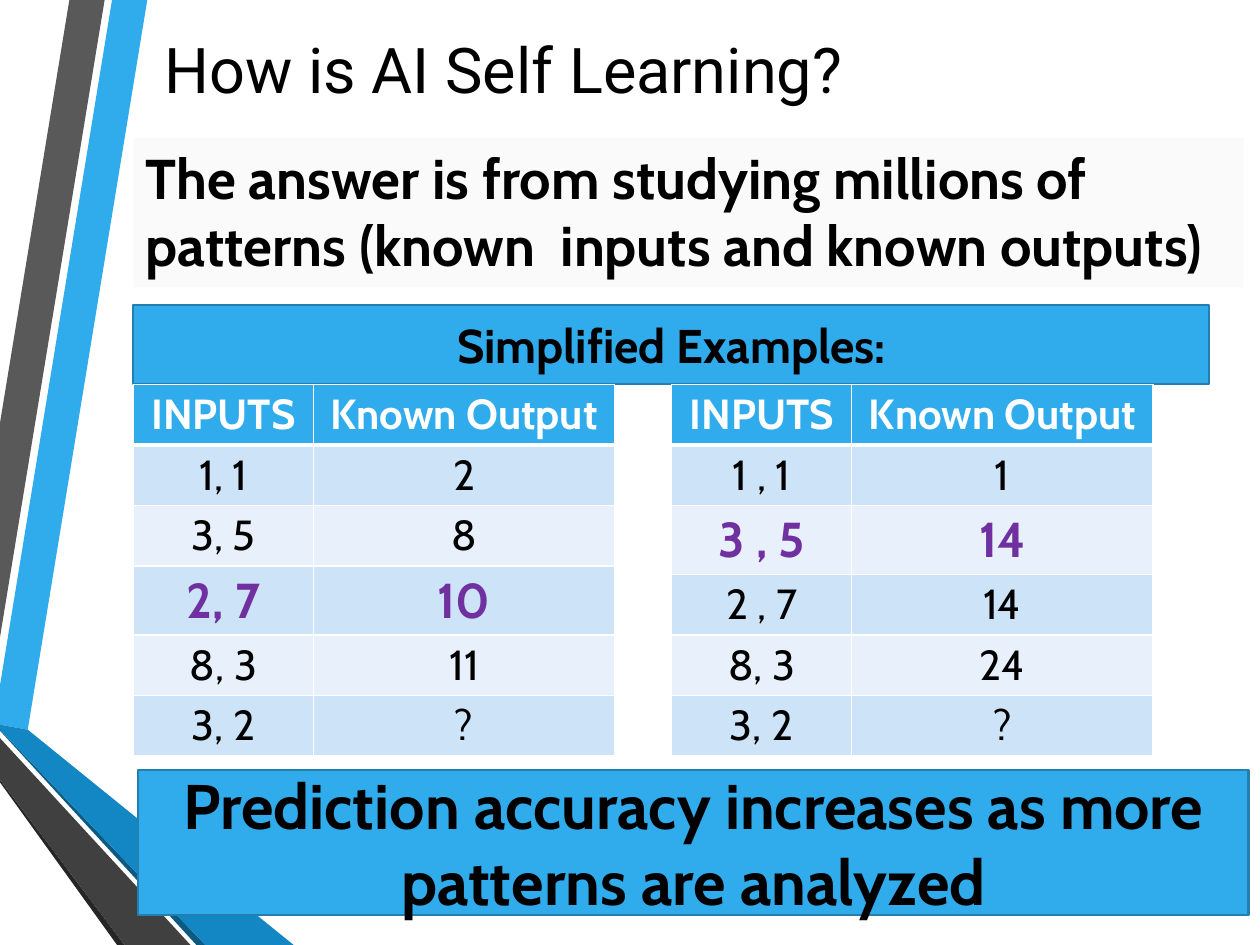
"""Build the slide on how AI learns from known inputs and outputs."""
import lxml.etree
import pptx
import pptx.dml.color
import pptx.enum.shapes
import pptx.enum.text
import pptx.oxml.ns
import pptx.util

Cm = pptx.util.Cm
Pt = pptx.util.Pt
qn = pptx.oxml.ns.qn
ALIGN = pptx.enum.text.PP_ALIGN
ANCHOR = pptx.enum.text.MSO_ANCHOR

BLUE, EDGE_BLUE, PURPLE = "30ACEC", "247FAF", "7030A0"
BLACK, WHITE, GREY = "000000", "FFFFFF", "A6A6A6"
BANDS = ("CDE3F8", "E8F1FB")

RIBBONS = [
    (BLUE, [(0, 13.82), (0, 14.61), (0.56, 14.71), (2.97, 0), (2.26, 0)]),
    ("595959", [(2.11, 0), (1.4, 0), (0, 8.53), (0, 12.85)]),
    ("262626", [(0, 15.72), (0, 15.77), (2.36, 19.05), (2.51, 19.05)]),
    ("0C5A82", [(0, 14.71), (0, 14.73), (3.96, 19.05), (4.14, 19.05)]),
    ("1287C3", [(0, 14.71), (4.14, 19.05), (5.92, 19.05), (0.56, 14.71), (0, 14.61)]),
    ("404040", [(0, 15.72), (2.51, 19.05), (3.84, 19.05), (0, 14.88)]),
]
HEADER = ("INPUTS", "Known Output")
SUM_ROWS = [HEADER, ("1, 1", "2"), ("3, 5", "8"), ("2, 7", "10"), ("8, 3", "11"), ("3, 2", "?")]
PATTERN_ROWS = [HEADER, ("1 , 1", "1"), ("3 , 5", "14"), ("2 , 7", "14"), ("8, 3", "24"), ("3, 2", "?")]


def color(value):
    return pptx.dml.color.RGBColor.from_string(value)


def set_alpha(fill_parent, percent):
    rgb = fill_parent.find(qn("a:solidFill")).find(qn("a:srgbClr"))
    lxml.etree.SubElement(rgb, qn("a:alpha")).set("val", str(percent * 1000))


def write(frame, text, size, text_color=BLACK, bold=True, font="Cabin", align=ALIGN.CENTER):
    paragraph = frame.paragraphs[0]
    paragraph.alignment = align
    run = paragraph.add_run()
    run.text = text
    run.font.name = font
    run.font.size = Pt(size)
    run.font.bold = bold
    run.font.color.rgb = color(text_color)


def add_ribbon(slide, fill, points):
    corners = [(Cm(x), Cm(y)) for x, y in points]
    builder = slide.shapes.build_freeform(*corners[0])
    builder.add_line_segments(corners[1:], close=True)
    shape = builder.convert_to_shape()
    shape.shadow.inherit = False
    shape.fill.solid()
    shape.fill.fore_color.rgb = color(fill)
    shape.line.fill.background()


def add_title(slide, text):
    box = slide.shapes.add_textbox(Cm(1.47), Cm(0.61), Cm(22.91), Cm(1.55))
    frame = box.text_frame
    frame.word_wrap = True
    frame.vertical_anchor = ANCHOR.MIDDLE
    frame.margin_left = Cm(1.85)
    write(frame, text, 36, bold=False, font="Roboto", align=ALIGN.LEFT)


def add_bar(slide, box, text, size, fill=BLUE, line=EDGE_BLUE, line_width=1.25,
            align=ALIGN.CENTER, anchor=ANCHOR.MIDDLE):
    rectangle = pptx.enum.shapes.MSO_SHAPE.RECTANGLE
    shape = slide.shapes.add_shape(rectangle, *(Cm(length) for length in box))
    shape.shadow.inherit = False
    shape.fill.solid()
    shape.fill.fore_color.rgb = color(fill)
    shape.line.color.rgb = color(line)
    shape.line.width = Pt(line_width)
    shape.text_frame.word_wrap = True
    shape.text_frame.vertical_anchor = anchor
    write(shape.text_frame, text, size, align=align)
    return shape


def add_statement(slide, text):
    shape = add_bar(slide, (2.69, 2.77, 22.38, 3.02), text, 32, GREY, WHITE, 0.25,
                    ALIGN.LEFT, ANCHOR.TOP)
    properties = shape.element.spPr
    set_alpha(properties, 5)
    set_alpha(properties.find(qn("a:ln")), 20)


def set_borders(cell, bottom_width):
    properties = cell._tc.get_or_add_tcPr()
    for side, width in (("L", 1), ("R", 1), ("T", 1), ("B", bottom_width)):
        line = lxml.etree.SubElement(properties, qn("a:ln" + side), w=str(Pt(width)))
        fill = lxml.etree.SubElement(line, qn("a:solidFill"))
        lxml.etree.SubElement(fill, qn("a:srgbClr"), val=WHITE)


def style_cell(cell, text, row, highlighted):
    header = row == 0
    set_borders(cell, 3 if header else 1)
    cell.fill.solid()
    cell.fill.fore_color.rgb = color(BLUE if header else BANDS[(row - 1) % 2])
    cell.margin_left = cell.margin_right = Cm(0.18)
    cell.margin_top = cell.margin_bottom = Cm(0.1)
    text_color = WHITE if header else PURPLE if highlighted else BLACK
    write(cell.text_frame, text, 28 if highlighted else 24, text_color, header or highlighted)


def add_examples(slide, left, rows, highlighted_row):
    widths = (Cm(3.63), Cm(6.07))
    row_height = Cm(1.22)
    table = slide.shapes.add_table(len(rows), len(widths), Cm(left), Cm(7.75),
                                   sum(widths), row_height * len(rows)).table
    for column, width in zip(table.columns, widths):
        column.width = width
    for row, texts in enumerate(rows):
        table.rows[row].height = row_height
        for column, text in enumerate(texts):
            style_cell(table.cell(row, column), text, row, row == highlighted_row)


def main():
    presentation = pptx.Presentation()
    presentation.slide_width = Cm(25.4)
    presentation.slide_height = Cm(19.05)
    slide = presentation.slides.add_slide(presentation.slide_layouts[6])
    for fill, points in RIBBONS:
        add_ribbon(slide, fill, points)
    add_title(slide, "How is AI Self Learning?")
    add_statement(slide, "The answer is from studying millions of patterns "
                         "(known  inputs and known outputs)")
    add_bar(slide, (2.69, 6.15, 21.69, 1.6), "Simplified Examples:", 27)
    add_examples(slide, 2.69, SUM_ROWS, 3)
    add_bar(slide, (2.79, 15.52, 22.38, 2.92),
            "Prediction accuracy increases as more patterns are analyzed", 36)
    add_examples(slide, 13.54, PATTERN_ROWS, 2)
    presentation.save("out.pptx")


if __name__ == "__main__":
    main()
